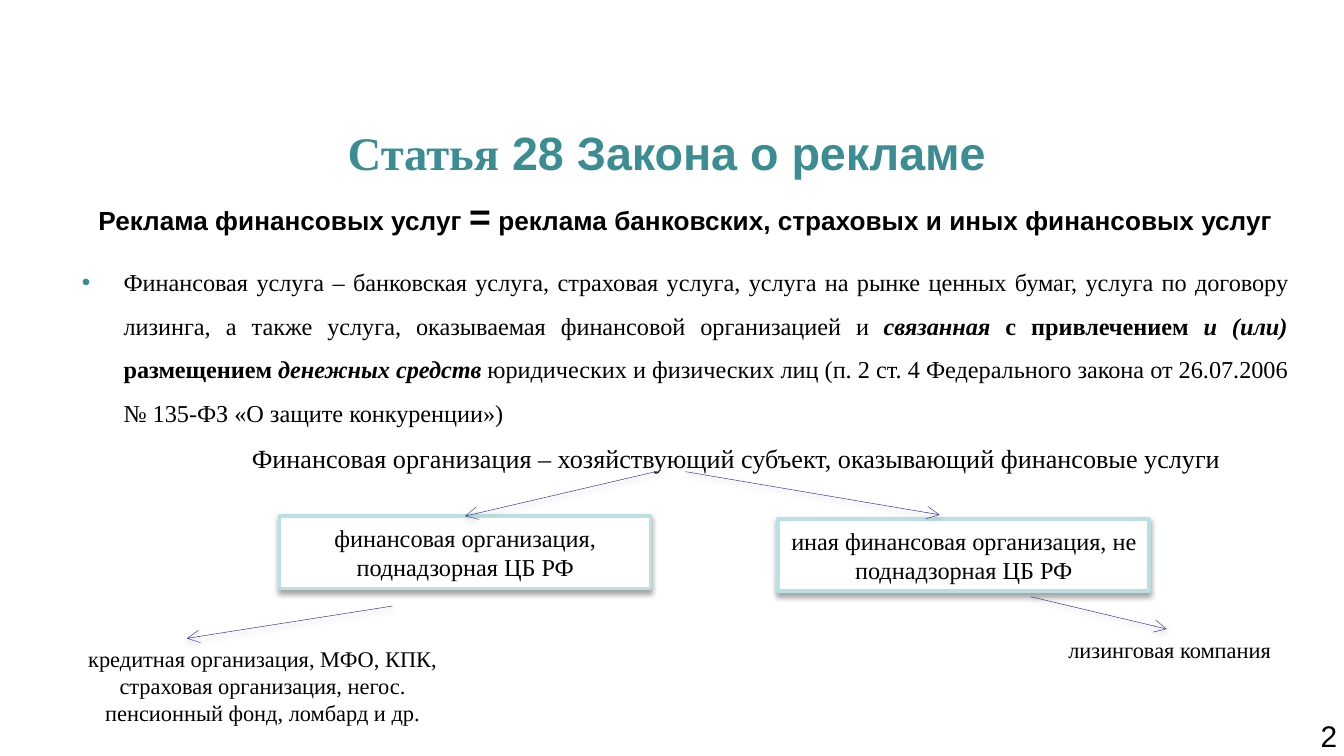
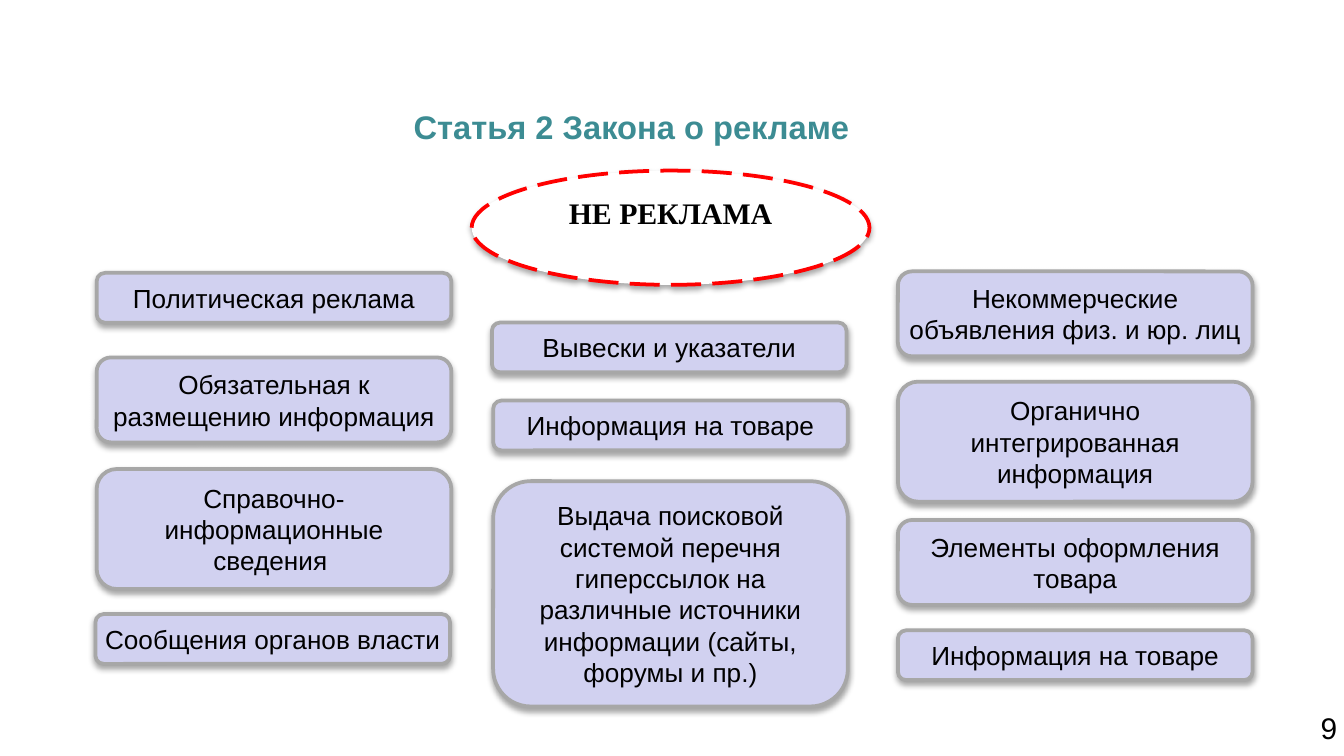
import pptx
import pptx.util
import pptx.dml.color
import pptx.enum.dml
import pptx.enum.shapes
import pptx.enum.text
import pptx.oxml
import pptx.oxml.ns
import lxml.etree

Pt = pptx.util.Pt
Align = pptx.enum.text.PP_ALIGN
Anchor = pptx.enum.text.MSO_ANCHOR
Shape = pptx.enum.shapes.MSO_SHAPE
qn = pptx.oxml.ns.qn

COLORS = {
    "text": "000000",
    "title": "3C8C93",
    "white": "FFFFFF",
    "box_line": "BBE0E3",
    "arrow": "333399",
    "card": "D1D1F0",
    "card_line": "A7A7A7",
    "alert": "FF0000",
}
SANS, SERIF = "Arial", "Times New Roman"
INSET = 3.6
CARD_WIDTH = 190

EQUATION = [
    ("Реклама финансовых услуг ", {"size": 14}),
    ("=", {"size": 20}),
    (" реклама банковских, страховых и иных финансовых услуг", {"size": 14}),
]
STRONG = {"bold": True}
STRONG_ITALIC = {"bold": True, "italic": True}
DEFINITION = [
    ("Финансовая услуга – банковская услуга, страховая услуга, услуга на рынке ценных бумаг, "
     "услуга по договору лизинга, а также услуга, оказываемая финансовой организацией и ", {}),
    ("связанная ", STRONG_ITALIC),
    ("с привлечением ", STRONG),
    ("и (или) ", STRONG_ITALIC),
    ("размещением ", STRONG),
    ("денежных средств ", STRONG_ITALIC),
    ("юридических и физических лиц (п. 2 ст. 4 Федерального закона от 26.07.2006 "
     "№ 135-ФЗ «О защите конкуренции»)", {}),
]
ORGANIZATION_BOXES = [
    ("финансовая организация, поднадзорная ЦБ РФ", (149.8, 276.5, 198.7, 38.9)),
    ("иная финансовая организация, не поднадзорная ЦБ РФ", (416.9, 277.9, 198.7, 38.9)),
]
ORGANIZATION_NOTES = [
    ("Финансовая организация – хозяйствующий субъект, оказывающий финансовые услуги ",
     (127.4, 233.3, 537.8, 36.7), 14),
    ("кредитная организация, МФО, КПК, страховая организация, негос. пенсионный фонд, "
     "ломбард и др.", (29.5, 342, 222.5, 51.1), 12),
    ("лизинговая компания", (559.4, 337, 134.6, 21.6), 12),
]
SUPERVISED_ARROW = (354.2, 252, 249.1, 276.5)
FREE_ARROWS = [
    (210.2, 324.7, 100.1, 342),
    (367.2, 252.7, 503.3, 275.8),
    (552.2, 319.7, 625, 337),
]
CARDS = [
    ("Политическая реклама", 51.8, 146.2, 1),
    ("Обязательная к размещению информация", 51.8, 191.5, 2),
    ("Справочно-информационные сведения ", 51.8, 251.3, 3),
    ("Сообщения органов власти", 51.1, 329, 1),
    ("Вывески и указатели", 263.5, 172.8, 1),
    ("Информация на товаре", 264.2, 214.6, 1),
    ("Выдача поисковой системой перечня гиперссылок на различные источники информации "
     "(сайты, форумы и пр.)", 264.2, 257.8, 6),
    ("Некоммерческие объявления физ. и юр. лиц", 481, 145.4, 2),
    ("Органично интегрированная информация", 481, 204.5, 3),
    ("Элементы оформления товара", 481, 278.6, 2),
    ("Информация на товаре", 481, 337.7, 1),
]


def rgb(name):
    return pptx.dml.color.RGBColor.from_string(COLORS[name])


def add_shadow(shape, distance=1.8, opacity=35):
    properties = shape._element.spPr
    for old in properties.findall(qn("a:effectLst")):
        properties.remove(old)
    effects = lxml.etree.SubElement(properties, qn("a:effectLst"))
    shadow = lxml.etree.SubElement(
        effects, qn("a:outerShdw"), blurRad=str(Pt(3)), dist=str(Pt(distance)),
        dir="5400000", rotWithShape="0")
    color = lxml.etree.SubElement(shadow, qn("a:srgbClr"), val=COLORS["text"])
    lxml.etree.SubElement(color, qn("a:alpha"), val=str(opacity * 1000))


def write(shape, runs, size=14, font=SANS, color="text", bold=False, align=Align.CENTER,
          anchor=Anchor.TOP, wrap=True):
    frame = shape.text_frame
    frame.word_wrap = wrap
    frame.vertical_anchor = anchor
    frame.margin_left = frame.margin_right = Pt(INSET)
    frame.margin_top = frame.margin_bottom = Pt(INSET)
    paragraph = frame.paragraphs[0]
    paragraph.alignment = align
    for text, style in [(runs, {})] if isinstance(runs, str) else runs:
        run = paragraph.add_run()
        run.text = text
        run.font.name = style.get("font", font)
        run.font.size = Pt(style.get("size", size))
        run.font.bold = style.get("bold", bold)
        run.font.italic = style.get("italic", False)
        run.font.color.rgb = rgb(color)
    return paragraph


def add_text(slide, runs, place, **style):
    return write(slide.shapes.add_textbox(*map(Pt, place)), runs, **style)


def add_box(slide, kind, runs, place, fill, line, **style):
    shape = slide.shapes.add_shape(kind, *map(Pt, place))
    shape.fill.solid()
    shape.fill.fore_color.rgb = rgb(fill)
    shape.line.color.rgb = rgb(line)
    shape.line.width = Pt(2)
    add_shadow(shape)
    write(shape, runs, anchor=Anchor.MIDDLE, **style)
    return shape


def add_arrow(slide, points):
    arrow = slide.shapes.add_connector(
        pptx.enum.shapes.MSO_CONNECTOR.STRAIGHT, *map(Pt, points))
    arrow.line.color.rgb = rgb("arrow")
    arrow.line.width = Pt(0.25)
    lxml.etree.SubElement(arrow.line._get_or_add_ln(), qn("a:tailEnd"), type="arrow")
    add_shadow(arrow, distance=1.6, opacity=38)
    return arrow


def add_bullet(paragraph):
    properties = paragraph._p.get_or_add_pPr()
    properties.set("marL", str(Pt(22.3)))
    properties.set("indent", str(-Pt(22.3)))
    color = lxml.etree.SubElement(properties, qn("a:buClr"))
    lxml.etree.SubElement(color, qn("a:srgbClr"), val=COLORS["title"])
    lxml.etree.SubElement(properties, qn("a:buFont"), typeface=SANS)
    lxml.etree.SubElement(properties, qn("a:buChar"), char="•")


def add_slide(presentation, number, number_top, title, title_place, title_size):
    slide = presentation.slides.add_slide(presentation.slide_layouts[6])
    add_text(slide, number, (702.7, number_top, 17.3, 24.5), size=16,
             align=Align.RIGHT, wrap=False)
    paragraph = add_text(slide, title, title_place, size=title_size, color="title", bold=True)
    return slide, paragraph


def build_financial_services(presentation):
    title = [("Статья", {"font": SERIF}), (" 28 Закона о рекламе", {})]
    slide, _ = add_slide(presentation, "2", 380.9, title, (31, 62.6, 652.3, 43.2), 25)
    add_text(slide, EQUATION, (43.9, 100, 646.6, 31.7), bold=True)
    definition = add_text(slide, DEFINITION, (40.3, 131.8, 653, 101.5), size=13,
                          font=SERIF, align=Align.JUSTIFY)
    add_bullet(definition)
    definition.line_spacing = 1.5
    boxes = [add_box(slide, Shape.RECTANGLE, text, place, "white", "box_line",
                     size=13, font=SERIF) for text, place in ORGANIZATION_BOXES]
    for text, place, size in ORGANIZATION_NOTES:
        add_text(slide, text, place, size=size, font=SERIF)
    add_arrow(slide, SUPERVISED_ARROW).end_connect(boxes[0], 0)
    for points in FREE_ARROWS:
        add_arrow(slide, points)


def build_not_advertising(presentation):
    slide, title = add_slide(presentation, "9", 376.6, "Статья 2 Закона о рекламе",
                             (31, 57.6, 614.9, 25.2), 17.5)
    title.line_spacing = 0.8
    ellipse = add_box(slide, Shape.OVAL, "НЕ РЕКЛАМА", (252.7, 91.4, 213.1, 61.2),
                      "white", "alert", size=16, font=SERIF, bold=True)
    ellipse.line.dash_style = pptx.enum.dml.MSO_LINE.LONG_DASH
    ellipse.text_frame.margin_bottom = Pt(20)
    for text, left, top, lines in CARDS:
        place = (left, top, CARD_WIDTH, 7.9 + 18.8 * lines)
        add_box(slide, Shape.ROUNDED_RECTANGLE, text, place, "card", "card_line")


def main():
    presentation = pptx.Presentation()
    presentation.slide_width = Pt(720)
    presentation.slide_height = Pt(405)
    build_financial_services(presentation)
    build_not_advertising(presentation)
    presentation.save("out.pptx")


if __name__ == "__main__":
    main()
